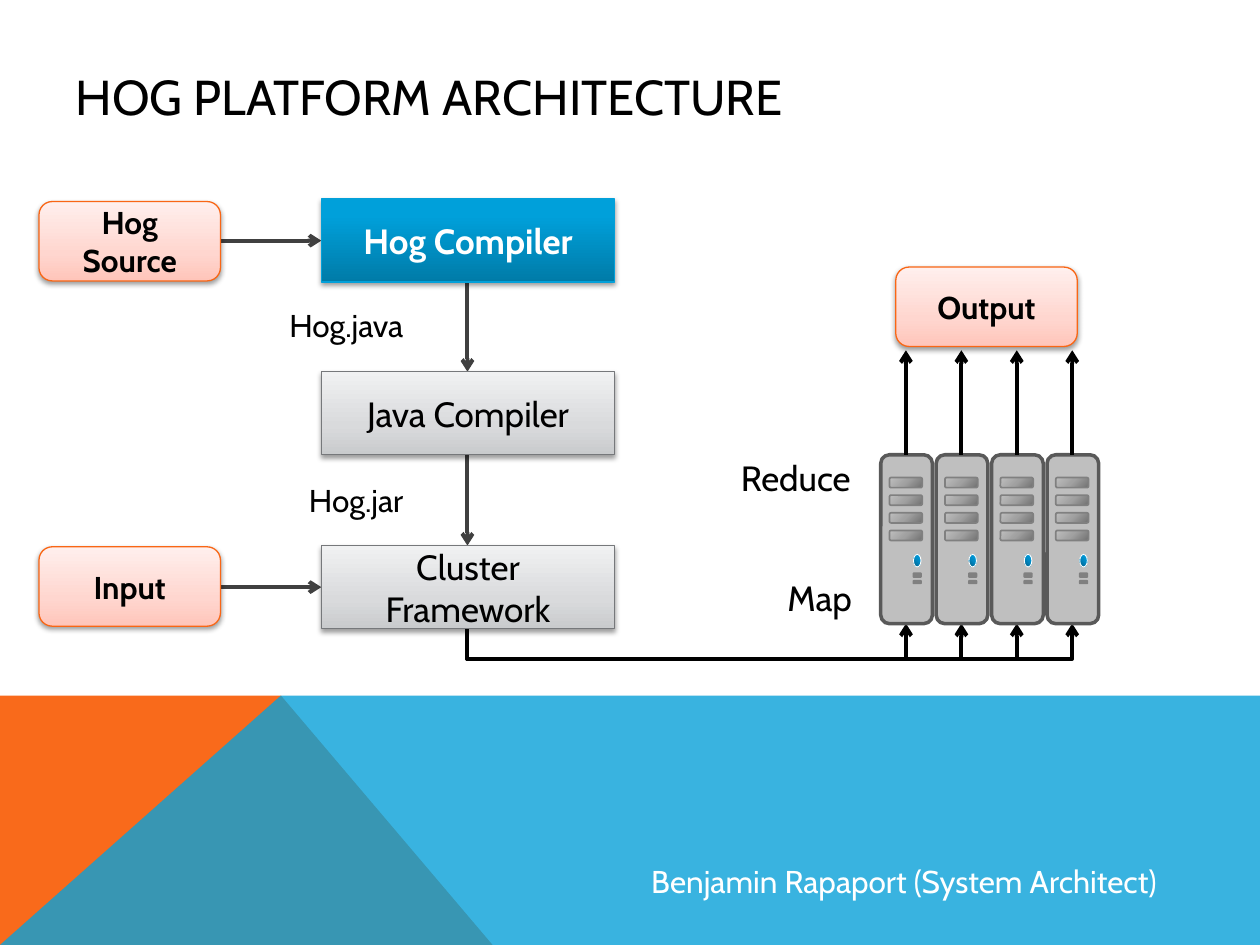
"""Build the Hog platform architecture slide."""
from dataclasses import dataclass

from lxml import etree
from pptx import Presentation
from pptx import util as u
from pptx.dml.color import RGBColor
from pptx.enum import shapes, text
from pptx.oxml import ns

KIND = shapes.MSO_SHAPE
ALIGN = text.PP_ALIGN


@dataclass(frozen=True)
class Theme:
    font: str = "Cabin"
    title_size: int = 28
    large: int = 20
    small: int = 18
    ink: str = "000000"
    paper: str = "FFFFFF"
    flow: str = "404040"
    orange: str = "F96A1B"
    sky: str = "08A1D9"
    primary: tuple = ((0, "007BA8"), (80, "00A0DA"), (100, "00A0DB"))
    primary_edge: str = "03A0D9"
    neutral: tuple = ((0, "C9CBCD"), (35, "D9DADC"), (100, "F0F1F2"))
    neutral_edge: str = "76787B"
    data: tuple = ((0, "FFC5BA"), (35, "FFD6CF"), (100, "FFEFED"))
    data_edge: str = "F96615"
    case: str = "BFBFBF"
    case_edge: str = "595959"
    slot: tuple = ((0, "717171"), (50, "A1A1A1"), (100, "BFBFBF"))
    slot_edge: str = "808080"
    lamp: tuple = ((0, "006189"), (50, "008AC4"), (100, "00A4E8"))


def add_node(parent, tag, **attributes):
    """Append a DrawingML element with the given attributes."""
    values = {name: str(value) for name, value in attributes.items()}
    return etree.SubElement(parent, ns.qn(f"a:{tag}"), values)


def write_text(frame, words, *, font, size, color, bold=False, align=ALIGN.LEFT,
               anchor=text.MSO_ANCHOR.TOP, wrap=True):
    """Fill a text frame with one formatted paragraph."""
    frame.word_wrap = wrap
    frame.vertical_anchor = anchor
    paragraph = frame.paragraphs[0]
    paragraph.alignment = align
    run = paragraph.add_run()
    run.text = words
    run.font.name = font
    run.font.size = u.Pt(size)
    run.font.bold = bold
    run.font.color.rgb = RGBColor.from_string(color)


class Painter:
    """Draws styled elements on the current slide."""

    def __init__(self, slide, theme):
        self.slide = slide
        self.theme = theme

    def title(self, words, *place):
        """Place and format the title placeholder."""
        heading = self.slide.shapes.title
        heading.left, heading.top, heading.width, heading.height = map(u.Inches, place)
        write_text(heading.text_frame, words, font=self.theme.font, size=self.theme.title_size,
                   color=self.theme.ink, anchor=text.MSO_ANCHOR.MIDDLE)

    def polygon(self, points, color, opacity=100):
        """Draw a closed, unlined outline."""
        corners = [(u.Inches(x), u.Inches(y)) for x, y in points]
        builder = self.slide.shapes.build_freeform(*corners[0])
        builder.add_line_segments(corners[1:], close=True)
        area = builder.convert_to_shape()
        area.shadow.inherit = False
        area.line.fill.background()
        area.fill.solid()
        area.fill.fore_color.rgb = RGBColor.from_string(color)
        if opacity < 100:
            tint = area._element.spPr.find(f".//{ns.qn('a:srgbClr')}")
            add_node(tint, "alpha", val=opacity * 1000)

    def gradient(self, shape, stops, angle):
        """Replace a solid fill with a linear gradient, or a radial one without an angle."""
        solid = shape._element.spPr.find(ns.qn("a:solidFill"))
        blend = etree.Element(ns.qn("a:gradFill"), rotWithShape="1")
        stop_list = add_node(blend, "gsLst")
        for position, color in stops:
            add_node(add_node(stop_list, "gs", pos=position * 1000), "srgbClr", val=color)
        if angle is None:
            add_node(add_node(blend, "path", path="circle"), "fillToRect", t=100000, r=100000)
        else:
            add_node(blend, "lin", ang=angle * 60000, scaled=0)
        solid.getparent().replace(solid, blend)

    def shape(self, kind, place, fill, edge, weight, angle=270, parent=None):
        """Draw a preset shape with a plain or gradient fill."""
        shape = (parent or self.slide).shapes.add_shape(kind, *map(u.Inches, place))
        shape.shadow.inherit = False
        shape.line.color.rgb = RGBColor.from_string(edge)
        shape.line.width = u.Pt(weight)
        shape.fill.solid()
        if isinstance(fill, str):
            shape.fill.fore_color.rgb = RGBColor.from_string(fill)
        else:
            self.gradient(shape, fill, angle)
        return shape

    def box(self, kind, words, place, fill, edge, **style):
        """Draw a shadowed, labelled box."""
        box = self.shape(kind, place, fill, edge, 0.75)
        effects = box._element.spPr.find(ns.qn("a:effectLst"))
        shade = add_node(effects, "outerShdw", blurRad=u.Pt(3.1), dist=u.Pt(1.6),
                         dir=5400000, rotWithShape=0)
        add_node(add_node(shade, "srgbClr", val=self.theme.ink), "alpha", val=38000)
        write_text(box.text_frame, words, font=self.theme.font, align=ALIGN.CENTER,
                   anchor=text.MSO_ANCHOR.MIDDLE, **style)

    def process(self, words, top, fill, edge, color, bold=False):
        """Draw one stage of the central pipeline."""
        self.box(KIND.RECTANGLE, words, (2.55, top, 2.33, 0.66), fill, edge,
                 size=self.theme.large, color=color, bold=bold)

    def store(self, words, left, top):
        """Draw a rounded input or output box."""
        self.box(KIND.ROUNDED_RECTANGLE, words, (left, top, 1.44, 0.63), self.theme.data,
                 self.theme.data_edge, size=self.theme.small, color=self.theme.ink, bold=True)

    def label(self, words, place, size, color, align=ALIGN.RIGHT, wrap=True):
        """Draw a free-standing label."""
        label = self.slide.shapes.add_textbox(*map(u.Inches, place))
        write_text(label.text_frame, words, font=self.theme.font, size=size, color=color,
                   align=align, wrap=wrap)
        label.text_frame.auto_size = text.MSO_AUTO_SIZE.SHAPE_TO_FIT_TEXT

    def arrow(self, start, end, color, kind=shapes.MSO_CONNECTOR.STRAIGHT):
        """Draw a connector with an open arrowhead at its end."""
        arrow = self.slide.shapes.add_connector(kind, *map(u.Inches, (*start, *end)))
        arrow.line.color.rgb = RGBColor.from_string(color)
        arrow.line.width = u.Pt(2.25)
        properties = arrow._element.spPr
        add_node(properties.find(ns.qn("a:ln")), "tailEnd", type="arrow")
        add_node(properties, "effectLst")
        return arrow

    def feed(self, start, end, drop):
        """Draw an elbow arrow that drops below both of its ends."""
        middle_x, middle_y = (start[0] + end[0]) / 2, (start[1] + end[1]) / 2
        rise, run = start[1] - end[1], end[0] - start[0]
        elbow = self.arrow((middle_x + rise / 2, middle_y + run / 2),
                           (middle_x - rise / 2, middle_y - run / 2),
                           self.theme.ink, shapes.MSO_CONNECTOR.ELBOW)
        properties = elbow._element.spPr
        properties.find(ns.qn("a:xfrm")).set("rot", "5400000")
        guides = properties.find(f".//{ns.qn('a:avLst')}")
        add_node(guides, "gd", name="adj1", fmla=f"val {round(-drop / rise * 100000)}")

    def server(self, left, top):
        """Draw a grouped server tower."""
        look = self.theme
        tower = self.slide.shapes.add_group_shape()
        rounded = KIND.ROUNDED_RECTANGLE
        self.shape(rounded, (left, top, 0.41, 1.34), look.case, look.case_edge, 2, parent=tower)
        for row in range(4):
            self.shape(rounded, (left + 0.07, top + 0.18 + 0.14 * row, 0.26, 0.08),
                       look.slot, look.slot_edge, 1, 225, tower)
        self.shape(KIND.OVAL, (left + 0.26, top + 0.79, 0.06, 0.1),
                   look.lamp, look.paper, 0.5, None, tower)
        for offset, height in ((0.94, 0.03), (1, 0.02)):
            self.shape(rounded, (left + 0.26, top + offset, 0.06, height),
                       look.slot_edge, look.slot_edge, 1, parent=tower)


def main():
    """Compose and save the slide."""
    deck = Presentation()
    deck.slide_width, deck.slide_height = u.Inches(10), u.Inches(7.5)
    theme = Theme()
    painter = Painter(deck.slides.add_slide(deck.slide_layouts[5]), theme)

    painter.polygon([(0, 7.5), (0, 5.52), (2.23, 5.52), (3.91, 7.5)], theme.orange)
    painter.polygon([(0, 7.5), (2.23, 5.52), (10, 5.52), (10, 7.5)], theme.sky, opacity=80)
    painter.title("HOG PLATFORM ARCHITECTURE", 0.5, 0.14, 9, 1.25)

    for column in range(4):
        offset = 0.44 * column
        lane = 7.19 + offset
        painter.feed((3.71, 4.98), (lane, 4.95), drop=0.25)
        painter.server(6.99 + offset, 3.61)
        painter.arrow((lane, 3.61), (lane, 2.78), theme.ink)

    for start, end in (((1.75, 1.91), (2.55, 1.91)), ((1.75, 4.66), (2.55, 4.66)),
                       ((3.71, 2.24), (3.71, 2.95)), ((3.71, 3.61), (3.71, 4.33))):
        painter.arrow(start, end, theme.flow)

    painter.process("Hog Compiler", 1.58, theme.primary, theme.primary_edge, theme.paper, bold=True)
    for words, top in (("Java Compiler", 2.95), ("Cluster Framework", 4.33)):
        painter.process(words, top, theme.neutral, theme.neutral_edge, theme.ink)

    for words, left, top in (("Hog Source", 0.31, 1.6), ("Input", 0.31, 4.34), ("Output", 7.11, 2.12)):
        painter.store(words, left, top)

    for words, place, size in (("Hog.java", (0.5, 2.38, 2.8, 0.4), theme.small),
                               ("Hog.jar", (0.5, 3.77, 2.8, 0.4), theme.small),
                               ("Reduce", (5.46, 3.57, 1.39, 0.44), theme.large),
                               ("Map", (5.97, 4.53, 0.89, 0.44), theme.large)):
        painter.label(words, place, size, theme.ink)
    painter.label("Benjamin Rapaport (System Architect)", (5.07, 6.79, 4.25, 0.4),
                  theme.small, theme.paper, ALIGN.LEFT, wrap=False)

    deck.save("out.pptx")


if __name__ == "__main__":
    main()
